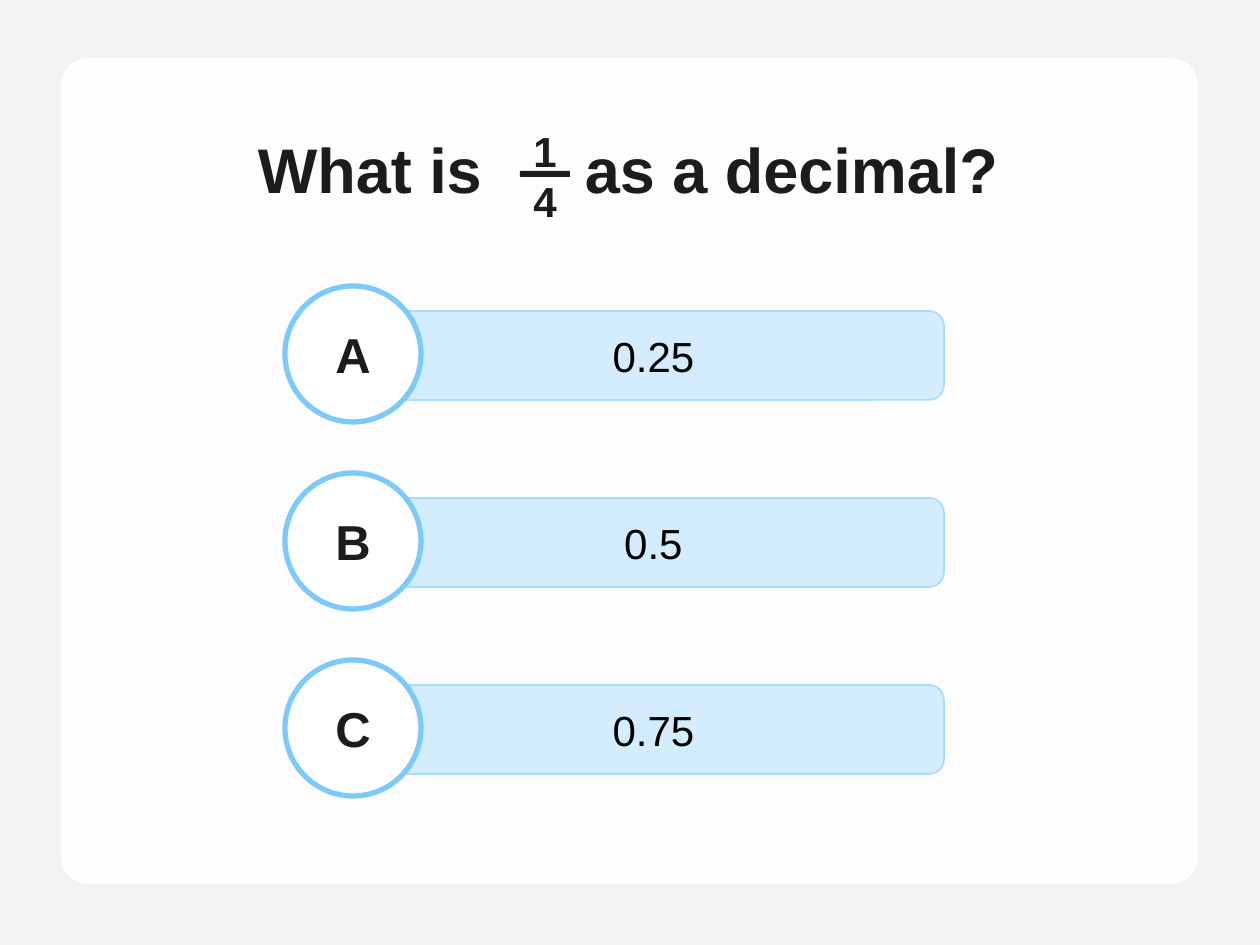
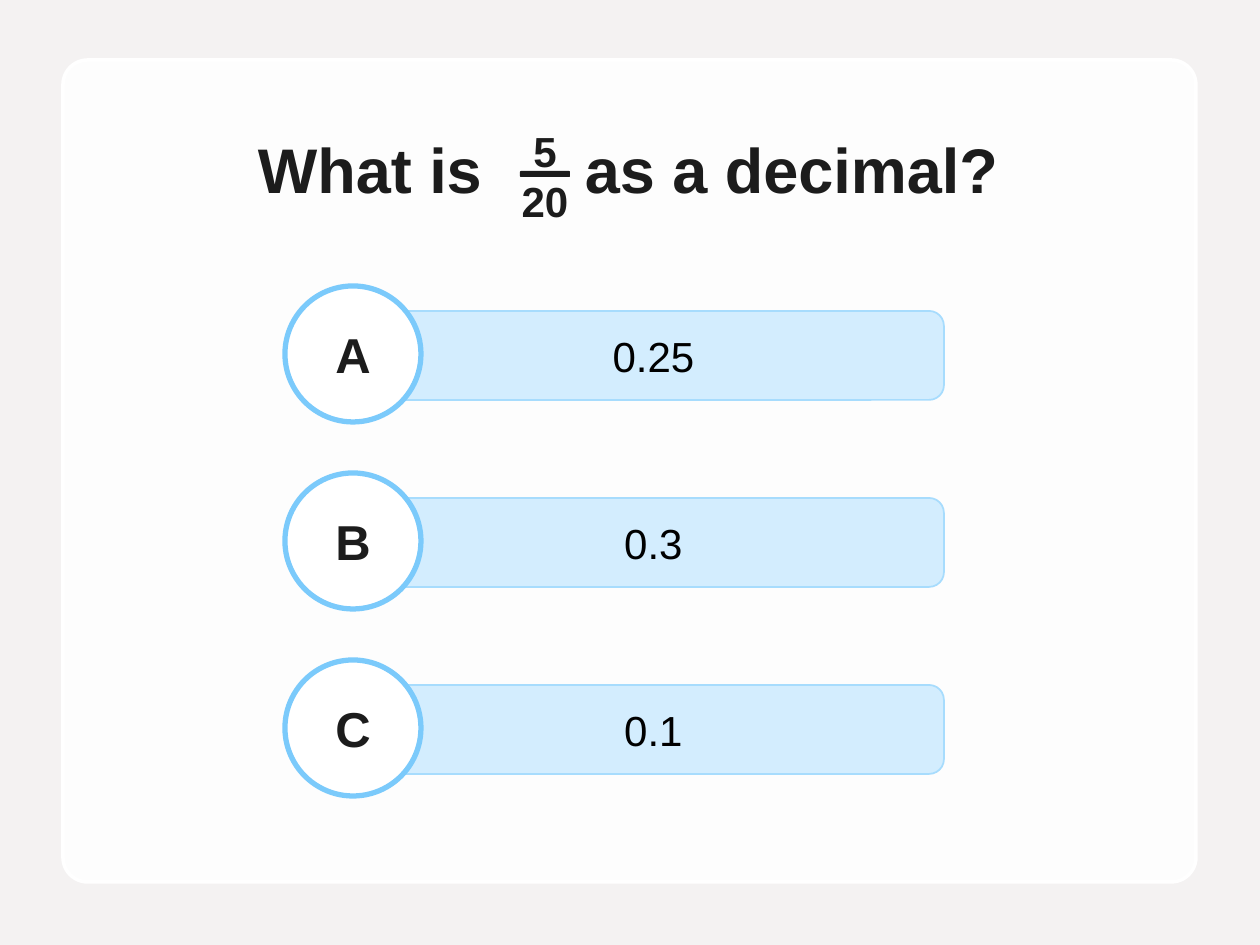
from dataclasses import dataclass
from typing import Optional

from lxml import etree
from pptx import Presentation
from pptx.dml.color import RGBColor
from pptx.enum.shapes import MSO_SHAPE
from pptx.enum.text import MSO_ANCHOR, MSO_AUTO_SIZE, PP_ALIGN
from pptx.oxml.ns import qn
from pptx.util import Emu, Pt

ROUNDED = MSO_SHAPE.ROUNDED_RECTANGLE
OVAL = MSO_SHAPE.OVAL
MIDDLE = MSO_ANCHOR.MIDDLE
TOP = MSO_ANCHOR.TOP
LEFT = PP_ALIGN.LEFT
CENTER = PP_ALIGN.CENTER
GROW = MSO_AUTO_SIZE.SHAPE_TO_FIT_TEXT

PAGE = RGBColor(0xF4, 0xF2, 0xF2)
WHITE = RGBColor(0xFF, 0xFF, 0xFF)
INK = RGBColor(0x1C, 0x1C, 0x1C)
BLACK = RGBColor(0x00, 0x00, 0x00)
ANSWER_FILL = RGBColor(0xD3, 0xED, 0xFE)
ANSWER_EDGE = RGBColor(0xA7, 0xDC, 0xFD)
BADGE_EDGE = RGBColor(0x7B, 0xCA, 0xFB)

EMU_PER_PX = 914400 / 126
ROW_PITCH = 187
TAB_TO_QUESTION_END = 327

QUESTION_FONT = {"name": "Arial", "size": Pt(36), "bold": True}
FRACTION_FONT = {"name": "Arial", "size": Pt(24), "bold": True}
BADGE_FONT = {"name": "Arial", "size": Pt(28), "bold": True}
ANSWER_FONT = {"name": "Arial", "size": Pt(24), "bold": False}


@dataclass(frozen=True)
class Box:
    left: int
    top: int
    width: int
    height: int

    def row(self, index: int) -> "Box":
        return Box(self.left, self.top + index * ROW_PITCH, self.width, self.height)

    def emu(self) -> list[Emu]:
        return [px(v) for v in (self.left, self.top, self.width, self.height)]


@dataclass(frozen=True)
class ShapeStyle:
    kind: int
    fill: RGBColor
    edge: Optional[RGBColor] = None
    edge_width: int = 0


@dataclass(frozen=True)
class Question:
    numerator: str
    denominator: str
    answers: tuple[str, str, str]


CARD = Box(63, 60, 1133, 822)
TITLE = Box(63, 105, 1133, 137)
FRACTION = Box(520, 115, 50, 122)
FRACTION_BAR = Box(520, 171, 50, 6)
ANSWER = Box(363, 311, 581, 89)
BADGE = Box(285, 286, 136, 136)

CARD_STYLE = ShapeStyle(ROUNDED, WHITE, WHITE, 2)
FRACTION_BAR_STYLE = ShapeStyle(ROUNDED, INK)
ANSWER_STYLE = ShapeStyle(ROUNDED, ANSWER_FILL, ANSWER_EDGE, 1)
BADGE_STYLE = ShapeStyle(OVAL, WHITE, BADGE_EDGE, 3)

QUESTIONS = (
    Question("1", "4", ("0.25", "0.5", "0.75")),
    Question("5", "20", ("0.25", "0.3", "0.1")),
)


def px(length: int) -> Emu:
    return Emu(round(length * EMU_PER_PX))


def set_values(target, values: dict) -> None:
    for attribute, value in values.items():
        setattr(target, attribute, value)


def draw_shape(slide, box: Box, style: ShapeStyle):
    shape = slide.shapes.add_shape(style.kind, *box.emu())
    shape.shadow.inherit = False
    shape.fill.solid()
    shape.fill.fore_color.rgb = style.fill
    if style.edge is None:
        shape.line.fill.background()
    else:
        shape.line.color.rgb = style.edge
        shape.line.width = Pt(style.edge_width)
    return shape


def write(shape, lines: list[str], font: dict, color: RGBColor,
          frame: dict, paragraph_format: dict) -> None:
    text_frame = shape.text_frame
    set_values(text_frame, {"word_wrap": True, **frame})
    text_frame.text = "\n".join(lines)
    for paragraph in text_frame.paragraphs:
        set_values(paragraph, paragraph_format)
        for run in paragraph.runs:
            set_values(run.font, font)
            run.font.color.rgb = color


def draw_card(slide) -> None:
    slide.background.fill.solid()
    slide.background.fill.fore_color.rgb = PAGE
    card = draw_shape(slide, CARD, CARD_STYLE)
    card.adjustments[0] = 0.03
    color = card.element.spPr.find(f"{qn('a:solidFill')}/{qn('a:srgbClr')}")
    etree.SubElement(color, qn("a:alpha"), val="90000")


def draw_title(slide) -> None:
    title = slide.shapes.add_textbox(*TITLE.emu())
    write(title, ["What is\tas a decimal?"], QUESTION_FONT, INK,
          {"vertical_anchor": MIDDLE, "margin_left": px(195), "margin_right": px(35),
           "margin_top": px(35), "margin_bottom": px(35)},
          {"alignment": LEFT, "line_spacing": 0.9})
    properties = title.text_frame.paragraphs[0]._p.get_or_add_pPr()
    tabs = etree.SubElement(properties, qn("a:tabLst"))
    etree.SubElement(tabs, qn("a:tab"), pos=str(px(TAB_TO_QUESTION_END)), algn="l")


def draw_fraction(slide, question: Question) -> None:
    fraction = slide.shapes.add_textbox(*FRACTION.emu())
    write(fraction, [question.numerator, question.denominator], FRACTION_FONT, INK,
          {"vertical_anchor": TOP, "auto_size": GROW, "margin_left": 0,
           "margin_right": 0, "margin_top": px(10), "margin_bottom": px(10)},
          {"alignment": CENTER})
    draw_shape(slide, FRACTION_BAR, FRACTION_BAR_STYLE)


def draw_labels(slide, labels: tuple[str, ...], first: Box, style: ShapeStyle,
                font: dict, color: RGBColor) -> None:
    for index, label in enumerate(labels):
        shape = draw_shape(slide, first.row(index), style)
        write(shape, [label], font, color,
              {"vertical_anchor": MIDDLE}, {"alignment": CENTER})


def main() -> None:
    deck = Presentation()
    set_values(deck, {"slide_width": px(1260), "slide_height": px(945)})
    for question in QUESTIONS:
        slide = deck.slides.add_slide(deck.slide_layouts[6])
        draw_card(slide)
        draw_labels(slide, question.answers, ANSWER, ANSWER_STYLE, ANSWER_FONT, BLACK)
        draw_title(slide)
        draw_fraction(slide, question)
        draw_labels(slide, ("A", "B", "C"), BADGE, BADGE_STYLE, BADGE_FONT, INK)
    deck.save("out.pptx")


if __name__ == "__main__":
    main()
